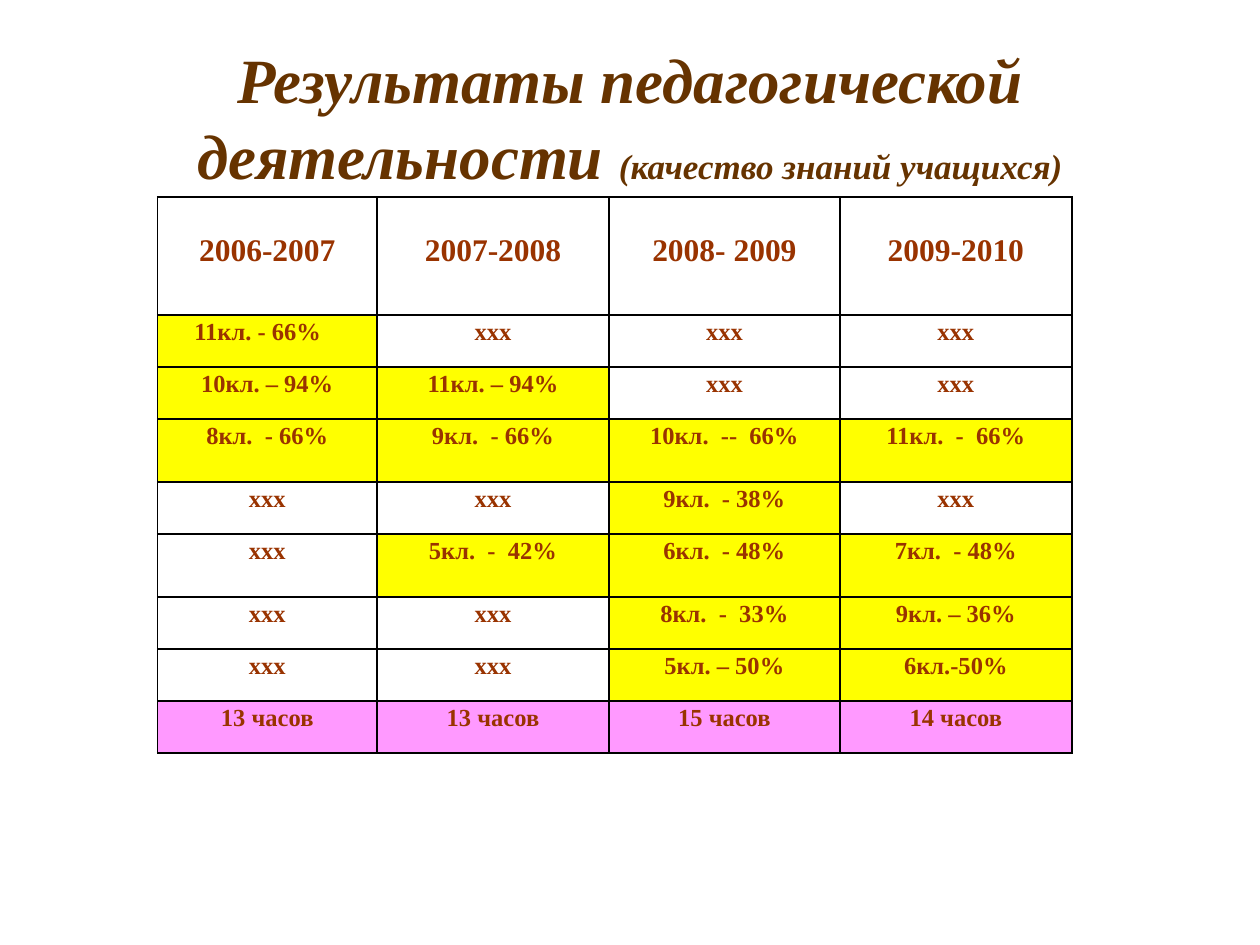
from dataclasses import dataclass

from lxml.etree import SubElement
from pptx import Presentation
from pptx.dml.color import RGBColor
from pptx.enum.text import MSO_ANCHOR, PP_ALIGN
from pptx.oxml.ns import qn
from pptx.util import Pt


@dataclass(frozen=True)
class Theme:
    font: str = "Times New Roman"
    title_color: str = "663300"
    text_color: str = "993300"
    border_color: str = "000000"
    result_fill: str = "FFFF00"
    hours_fill: str = "FF99FF"
    title_size: int = 36
    subtitle_size: int = 20
    header_size: int = 18
    body_size: int = 14
    border_width: int = 1


class SlideBuilder:
    """Draws styled elements on the current slide."""

    def __init__(self, page, theme):
        self.page = page
        self.theme = theme

    def add_span(self, para, text, size, color, italic=False):
        span = para.add_run()
        span.text = text
        span.font.name = self.theme.font
        span.font.size = Pt(size)
        span.font.bold = True
        span.font.italic = italic
        span.font.color.rgb = RGBColor.from_string(color)

    def add_title(self, left, top, width, height, spans):
        box = self.page.shapes.add_textbox(Pt(left), Pt(top), Pt(width), Pt(height))
        frame = box.text_frame
        frame.word_wrap = True
        frame.vertical_anchor = MSO_ANCHOR.MIDDLE
        para = frame.paragraphs[0]
        para.alignment = PP_ALIGN.CENTER
        for text, size in spans:
            self.add_span(para, text, size, self.theme.title_color, italic=True)

    def add_borders(self, cell):
        properties = cell._tc.get_or_add_tcPr()
        for position, side in enumerate(("lnL", "lnR", "lnT", "lnB")):
            line = SubElement(properties, qn(f"a:{side}"), w=str(Pt(self.theme.border_width)))
            fill = SubElement(line, qn("a:solidFill"))
            SubElement(fill, qn("a:srgbClr"), val=self.theme.border_color)
            properties.insert(position, line)

    def fill_cell(self, cell, text):
        if "кл." in text:
            color = self.theme.result_fill
        elif "часов" in text:
            color = self.theme.hours_fill
        else:
            cell.fill.background()
            return
        cell.fill.solid()
        cell.fill.fore_color.rgb = RGBColor.from_string(color)

    def add_cell(self, cell, text, size, top_margin):
        cell.margin_left = cell.margin_right = Pt(5)
        cell.margin_top, cell.margin_bottom = Pt(top_margin), Pt(2)
        para = cell.text_frame.paragraphs[0]
        para.alignment = PP_ALIGN.CENTER
        self.add_span(para, text, size, self.theme.text_color)
        self.fill_cell(cell, text)
        self.add_borders(cell)

    def add_table(self, left, top, widths, heights, rows):
        frame = self.page.shapes.add_table(
            len(rows), len(widths), Pt(left), Pt(top), Pt(sum(widths)), Pt(sum(heights))
        )
        table = frame.table
        table.first_row = table.horz_banding = False
        for column, width in zip(table.columns, widths):
            column.width = Pt(width)
        for index, (texts, height) in enumerate(zip(rows, heights)):
            table.rows[index].height = Pt(height)
            size, margin = (self.theme.header_size, 21) if index == 0 else (self.theme.body_size, 2)
            for cell, text in zip(table.rows[index].cells, texts):
                self.add_cell(cell, text, size, margin)
        return table


RESULTS = [
    ("2006-2007", "2007-2008", "2008- 2009", "2009-2010"),
    ("11кл. - 66%", "ххх", "ххх", "ххх"),
    ("10кл. – 94%", "11кл. – 94%", "ххх", "ххх"),
    ("8кл.  - 66%", "9кл.  - 66%", "10кл.  --  66%", "11кл.  -  66%"),
    ("xxx", "ххх", "9кл.  - 38%", "ххх"),
    ("ххх", "5кл.  -  42%", "6кл.  - 48%", "7кл.  - 48%"),
    ("ххх", "ххх", "8кл.  -  33%", "9кл. – 36%"),
    ("ххх", "ххх", "5кл. – 50%", "6кл.-50%"),
    ("13 часов", "13 часов", "15 часов", "14 часов"),
]


def main():
    deck = Presentation()
    deck.slide_width, deck.slide_height = Pt(720), Pt(540)
    theme = Theme()
    builder = SlideBuilder(deck.slides.add_slide(deck.slide_layouts[6]), theme)
    builder.add_title(36, 21.6, 648, 90, [
        ("Результаты педагогической деятельности ", theme.title_size),
        ("(качество знаний учащихся)", theme.subtitle_size),
    ])
    short, tall = 29.75, 36
    heights = [67.5, short, short, tall, short, tall, short, short, short]
    table = builder.add_table(90, 112.5, [125.5, 132.5, 132, 132.5], heights, RESULTS)
    table.cell(1, 0).margin_right = Pt(16)
    deck.save("out.pptx")


if __name__ == "__main__":
    main()
